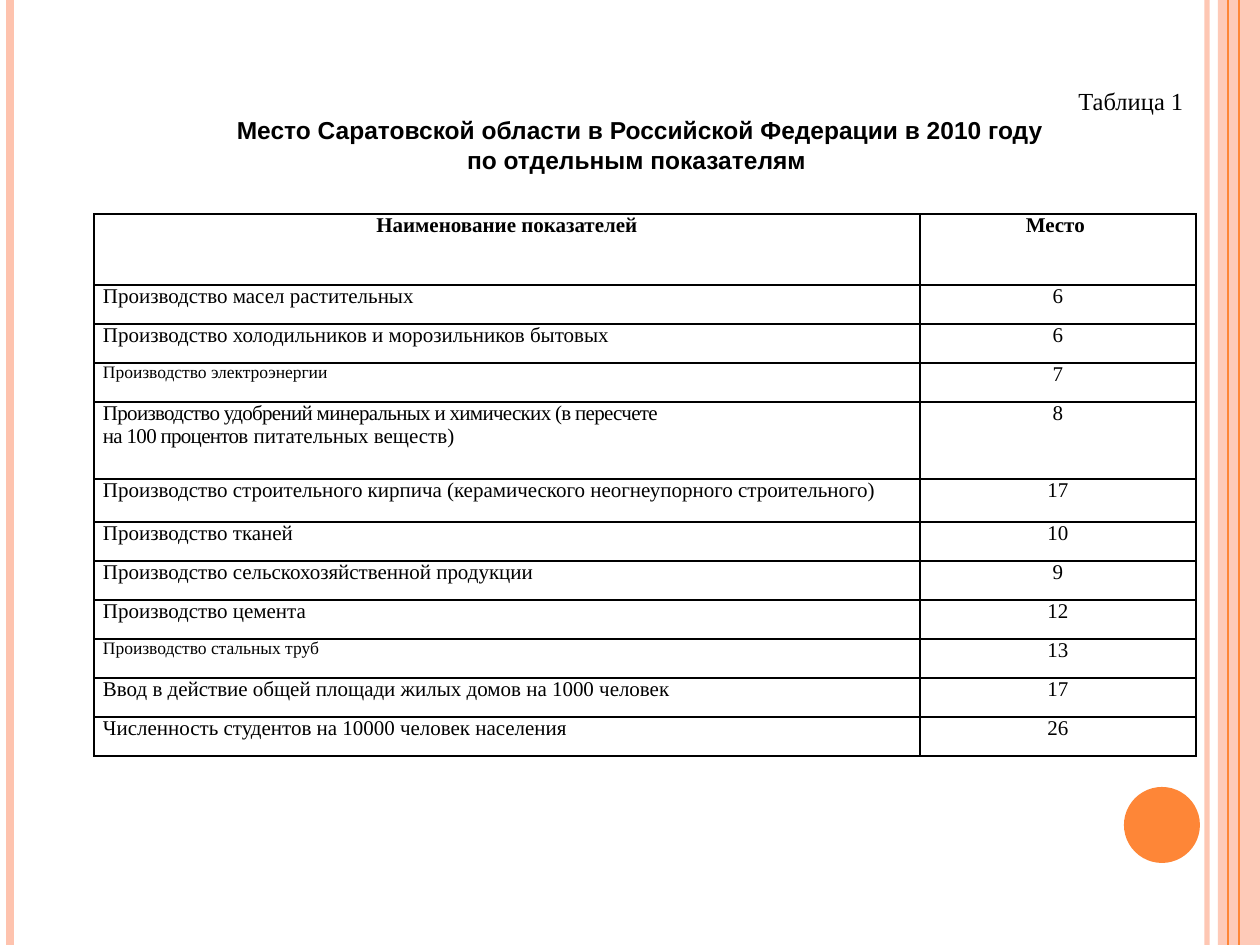
"""Build a slide with a ranked table of regional indicators."""
from dataclasses import dataclass

from lxml.etree import SubElement
from pptx import Presentation
from pptx.dml.color import RGBColor
from pptx.enum.shapes import MSO_CONNECTOR, MSO_SHAPE
from pptx.enum.text import MSO_ANCHOR, MSO_AUTO_SIZE, PP_ALIGN
from pptx.oxml.ns import qn
from pptx.util import Pt

SCALE = 914400 / 126
WIDTH, HEIGHT = 1260, 945


@dataclass(frozen=True)
class Theme:
    """Colours, fonts and type sizes."""
    ink: str = "000000"
    peach: str = "FEC3AE"
    orange: str = "FE8637"
    serif: str = "Times New Roman"
    sans: str = "Arial"
    head: float = 14
    body: float = 12
    small: float = 10


THEME = Theme()
STRIPES = [
    (1207, THEME.peach, 3, 93),
    (10, THEME.peach, 4.5, 100),
    (1239, THEME.orange, 1.5, 100),
    (1228, THEME.orange, 0.75, 100),
]
ROWS = [
    ("Производство масел растительных", "6"),
    ("Производство холодильников и морозильников бытовых", "6"),
    ("Производство электроэнергии", "7"),
    ("Производство удобрений минеральных и химических (в пересчете ", "8"),
    ("Производство строительного кирпича (керамического неогнеупорного строительного)", "17"),
    ("Производство тканей", "10"),
    ("Производство сельскохозяйственной продукции", "9"),
    ("Производство цемента", "12"),
    ("Производство стальных труб", "13"),
    ("Ввод в действие общей площади жилых домов на 1000 человек", "17"),
    ("Численность студентов на 10000 человек населения", "26"),
]
SMALL = {3, 9}
TIGHT = 4
TALL = {0: 71, TIGHT: 77, 5: 43}


def px(*sizes):
    """Turn pixel lengths into EMU."""
    return [round(size * SCALE) for size in sizes]


def write(para, text, size=THEME.body, font=THEME.serif, bold=False,
          align=PP_ALIGN.LEFT, track=0):
    """Add a formatted run to a paragraph."""
    para.alignment = align
    run = para.add_run()
    run.text = text
    run.font.size = Pt(size)
    run.font.name = font
    run.font.bold = bold
    run.font.color.rgb = RGBColor.from_string(THEME.ink)
    if track:
        run._r.get_or_add_rPr().set("spc", str(round(track * 100)))


def fade(shape, alpha):
    """Set the opacity of every colour in a shape, in percent."""
    for color in shape._element.spPr.iter(qn("a:srgbClr")):
        SubElement(color, qn("a:alpha"), val=str(alpha * 1000))


def stripe(slide, left, color, width, alpha):
    """Draw a line down the full slide."""
    line = slide.shapes.add_connector(
        MSO_CONNECTOR.STRAIGHT, *px(left, 0, left, HEIGHT))
    line.line.color.rgb = RGBColor.from_string(color)
    line.line.width = Pt(width)
    if alpha < 100:
        fade(line, alpha)
    SubElement(line._element.spPr, qn("a:effectLst"))


def block(slide, kind, box, color):
    """Draw a plain filled shape."""
    shape = slide.shapes.add_shape(kind, *px(*box))
    shape.shadow.inherit = False
    shape.fill.solid()
    shape.fill.fore_color.rgb = RGBColor.from_string(color)
    shape.line.fill.background()
    return shape


def heading(slide):
    """Fill the title placeholder with the caption and heading."""
    title = slide.shapes.title
    title.left, title.top, title.width, title.height = px(0, 79, 1196, 102)
    frame = title.text_frame
    frame.word_wrap = True
    frame.auto_size = MSO_AUTO_SIZE.SHAPE_TO_FIT_TEXT
    frame.vertical_anchor = MSO_ANCHOR.MIDDLE
    bold = dict(font=THEME.sans, bold=True, align=PP_ALIGN.CENTER)
    lines = [
        ("Таблица 1", dict(align=PP_ALIGN.RIGHT)),
        ("Место Саратовской области в Российской Федерации в 2010 году", bold),
        ("по отдельным показателям ", bold),
    ]
    for num, (text, form) in enumerate(lines):
        para = frame.add_paragraph() if num else frame.paragraphs[0]
        write(para, text, size=THEME.head, **form)
        para._p.get_or_add_pPr().set("indent", str(px(84)[0]))


def border(cell):
    """Give a cell thin lines on all sides and no fill."""
    props = cell._tc.get_or_add_tcPr()
    for side in ("lnL", "lnR", "lnT", "lnB"):
        line = SubElement(props, qn(f"a:{side}"), w=str(Pt(1)))
        fill = SubElement(line, qn("a:solidFill"))
        SubElement(fill, qn("a:srgbClr"), val=THEME.ink)
    cell.fill.background()


def entry(cell, text, **form):
    """Set up a table cell and return its paragraph."""
    border(cell)
    cell.margin_left, cell.margin_right = px(9, 9)
    cell.margin_top = cell.margin_bottom = 0
    para = cell.text_frame.paragraphs[0]
    para.space_before = Pt(6.8)
    write(para, text, **form)
    return para


def ranks(slide):
    """Add the table of indicators and places."""
    tall = [TALL.get(num, 39) for num in range(len(ROWS) + 1)]
    wide = [826, 276]
    table = slide.shapes.add_table(
        len(tall), 2, *px(94, 214, sum(wide), sum(tall))).table
    table.first_row = table.horz_banding = False
    for col, size in zip(table.columns, px(*wide)):
        col.width = size
    for row, size in zip(table.rows, px(*tall)):
        row.height = size
    for col, text in enumerate(("Наименование показателей", "Место ")):
        entry(table.cell(0, col), text, bold=True, align=PP_ALIGN.CENTER)
    for num, (name, place) in enumerate(ROWS, 1):
        size = THEME.small if num in SMALL else THEME.body
        track = -0.4 if num == TIGHT else 0
        para = entry(table.cell(num, 0), name, size=size, track=track)
        if num == TIGHT:
            para.add_line_break()
            write(para, "на 100 процентов", track=track)
            write(para, " питательных веществ)")
        entry(table.cell(num, 1), place, align=PP_ALIGN.CENTER)


def main():
    """Build and save the slide."""
    deck = Presentation()
    deck.slide_width, deck.slide_height = px(WIDTH, HEIGHT)
    slide = deck.slides.add_slide(deck.slide_layouts[5])
    band = block(slide, MSO_SHAPE.RECTANGLE, (1218, 0, 42, HEIGHT), THEME.peach)
    fade(band, 87)
    for item in STRIPES:
        stripe(slide, *item)
    block(slide, MSO_SHAPE.OVAL, (1124, 787, 76, 76), THEME.orange)
    ranks(slide)
    heading(slide)
    deck.save("out.pptx")


if __name__ == "__main__":
    main()
